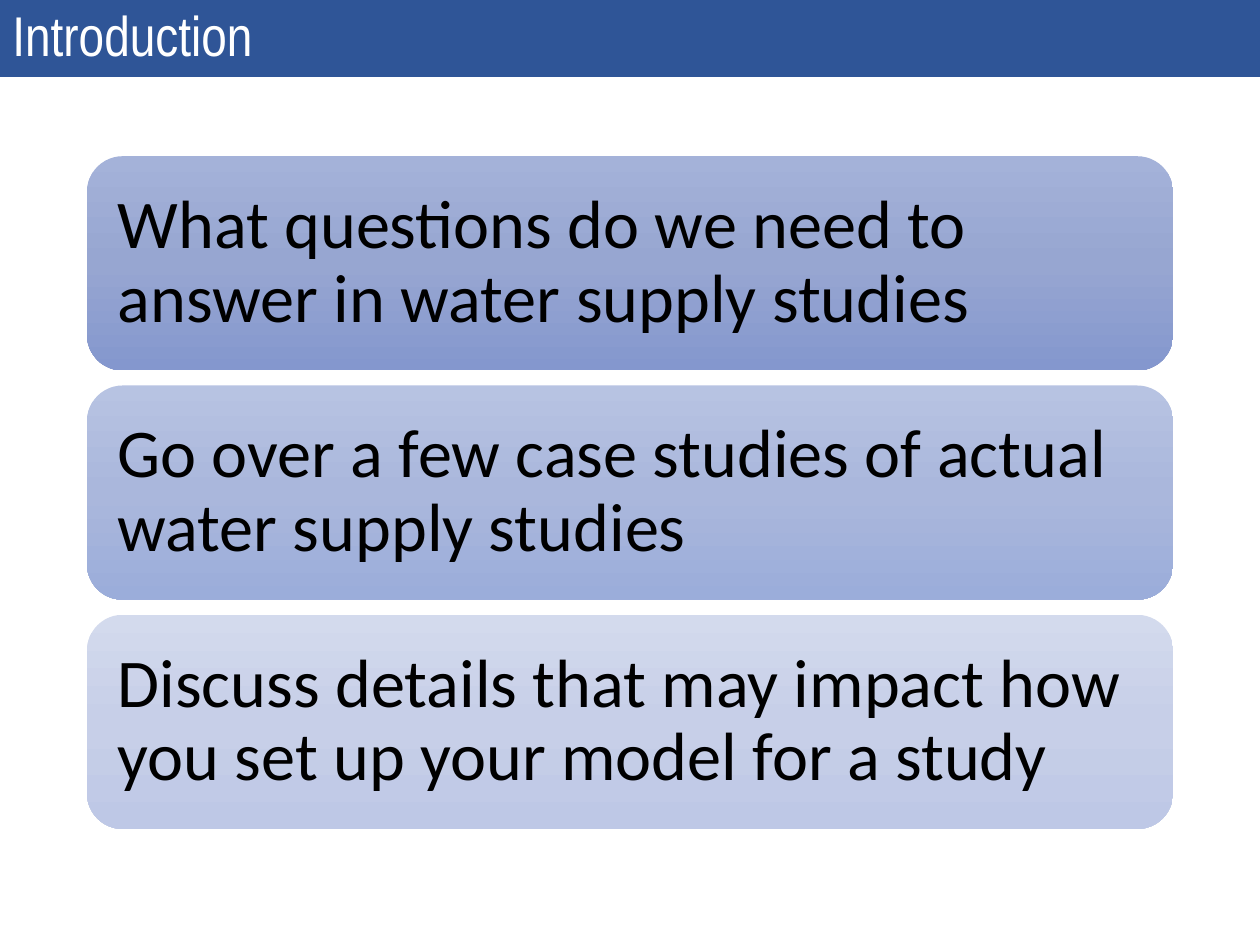
"""Build the introduction slide: a title bar above three gradient cards."""
from copy import deepcopy
from dataclasses import dataclass

from pptx import Presentation
from pptx import util as u
from pptx.dml.color import RGBColor
from pptx.enum import shapes, text
from pptx.oxml.ns import qn

WIDTH, HEIGHT = 10, 7.5
BAR_HEIGHT = 0.61
CARD_LEFT, CARD_TOP, CARD_HEIGHT, CARD_PITCH = 0.69, 1.24, 1.7, 1.82


@dataclass(frozen=True)
class Card:
    """One talking point with its top, middle and bottom colours."""
    wording: str
    colours: tuple[str, str, str]


CARDS = (
    Card("What questions do we need to answer in water supply studies",
         ("A4B2D9", "97A6D1", "8497CE")),
    Card("Go over a few case studies of actual water supply studies",
         ("B7C3E2", "AAB7DC", "9BADDA")),
    Card("Discuss details that may impact how you set up your model for a study",
         ("D3DAED", "C7CFE8", "BEC8E6")),
)


def colour(value: str) -> RGBColor:
    """Turn a hex string into a colour."""
    return RGBColor.from_string(value)


def add_panel(slide, kind, box: tuple, wording: str, font_name: str,
              size: int, font_colour: str):
    """Add a borderless shape with left-aligned, vertically centred text."""
    shape = slide.shapes.add_shape(kind, *(u.Inches(length) for length in box))
    shape.shadow.inherit = False
    shape.line.fill.background()
    frame = shape.text_frame
    frame.word_wrap = True
    frame.vertical_anchor = text.MSO_ANCHOR.MIDDLE
    paragraph = frame.paragraphs[0]
    paragraph.text = wording
    paragraph.alignment = text.PP_ALIGN.LEFT
    paragraph.line_spacing = 0.9
    paragraph.font.name = font_name
    paragraph.font.size = u.Pt(size)
    paragraph.font.color.rgb = colour(font_colour)
    return shape


def fill_gradient(shape, colours: tuple[str, str, str]) -> None:
    """Fill a shape from top to bottom with three evenly spaced colours."""
    fill = shape.fill
    fill.gradient()
    fill.gradient_angle = 270
    stop_list = shape._element.spPr.find(f".//{qn('a:gsLst')}")
    stop_list.insert(1, deepcopy(stop_list[0]))
    for index, (stop, value) in enumerate(zip(fill.gradient_stops, colours)):
        stop.position = index / 2
        stop.color.rgb = colour(value)


def add_card(slide, row: int, card: Card) -> None:
    """Add a rounded card on the given row."""
    box = (CARD_LEFT, CARD_TOP + row * CARD_PITCH,
           WIDTH - 2 * CARD_LEFT, CARD_HEIGHT)
    shape = add_panel(slide, shapes.MSO_SHAPE.ROUNDED_RECTANGLE, box,
                      card.wording, "Calibri", 39, "000000")
    fill_gradient(shape, card.colours)
    frame = shape.text_frame
    frame.margin_left = frame.margin_right = u.Inches(0.16)
    frame.margin_top = frame.margin_bottom = u.Inches(0.16)


def main() -> None:
    """Build and save the presentation."""
    presentation = Presentation()
    presentation.slide_width = u.Inches(WIDTH)
    presentation.slide_height = u.Inches(HEIGHT)
    slide = presentation.slides.add_slide(presentation.slide_layouts[6])
    bar = add_panel(slide, shapes.MSO_SHAPE.RECTANGLE, (0, 0, WIDTH, BAR_HEIGHT),
                    "Introduction", "Arial Narrow", 32, "FFFFFF")
    bar.fill.solid()
    bar.fill.fore_color.rgb = colour("2F5597")
    for row, card in enumerate(CARDS):
        add_card(slide, row, card)
    presentation.save("out.pptx")


if __name__ == "__main__":
    main()
